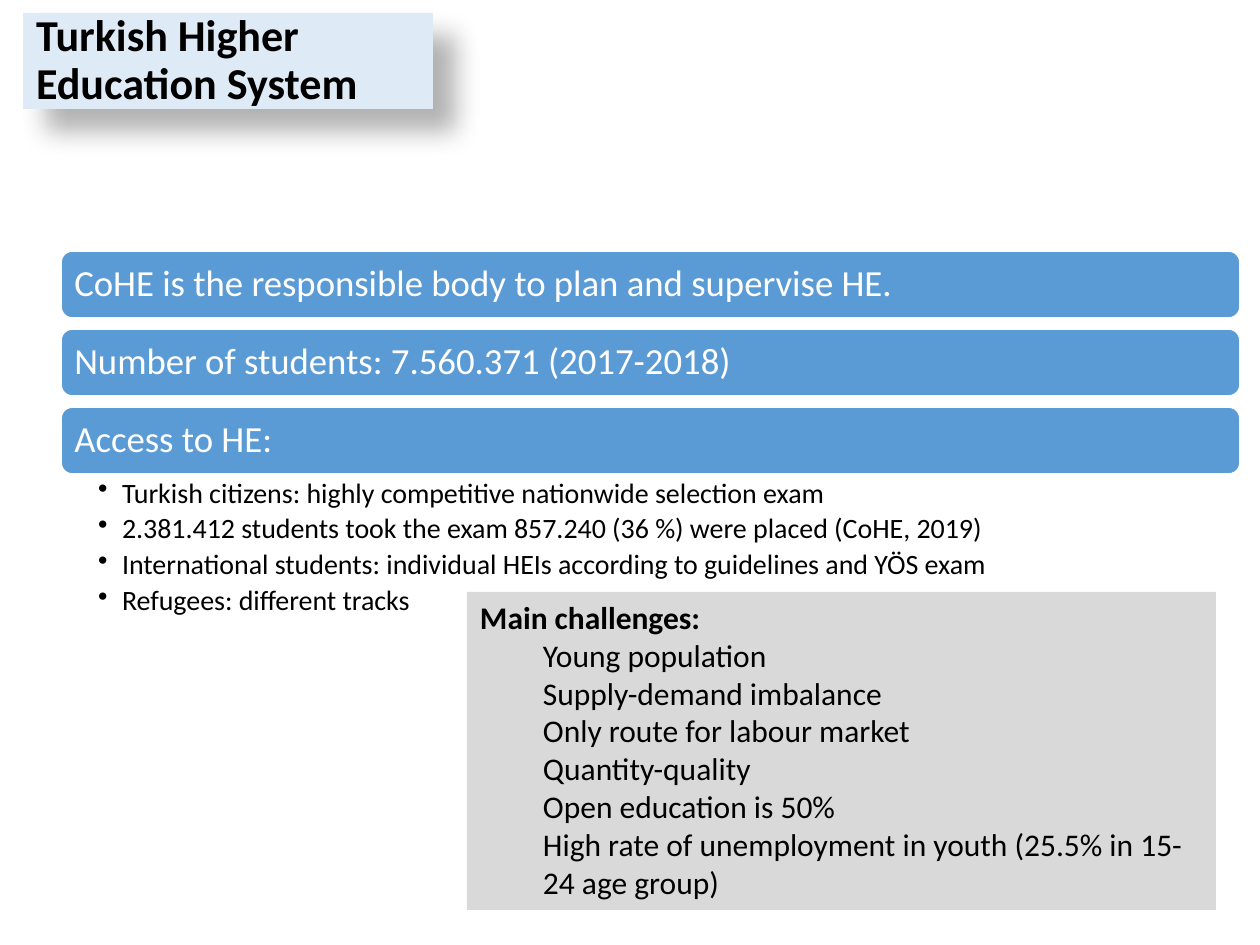
from dataclasses import dataclass

from lxml import etree
from pptx import Presentation
from pptx import util as u
from pptx.dml.color import RGBColor
from pptx.enum import shapes, text
from pptx.oxml import ns

EMU_PER_PX = 914400 / 126


@dataclass(frozen=True)
class Theme:
    font: str = "Calibri"
    ink: str = "000000"
    paper: str = "FFFFFF"
    title_fill: str = "DEEBF7"
    bar_fill: str = "5B9BD5"
    challenge_fill: str = "D9D9D9"
    title_size: float = 25.2
    bar_size: float = 21
    bullet_size: float = 16
    challenge_size: float = 18


@dataclass(frozen=True)
class Box:
    left: int
    top: int
    width: int
    height: int


@dataclass(frozen=True)
class Line:
    words: str
    size: float
    color: str
    bold: bool = False
    level: int = 0
    margin: int = 0
    hanging: int = 0
    bullet: str = ""
    spacing: float = 1.0
    after: float = 0


THEME = Theme()
TITLE_BOX = Box(23, 13, 410, 96)
FIRST_BAR = Box(61, 251, 1179, 67)
BAR_PITCH = 78
BULLET_BOX = Box(61, 475, 1179, 152)
CHALLENGE_BOX = Box(467, 592, 749, 318)

BARS = (
    "CoHE is the responsible body to plan and supervise HE.",
    "Number of students: 7.560.371 (2017-2018)",
    "Access to HE:",
)
ACCESS_ROUTES = (
    "Turkish citizens: highly competitive nationwide selection exam",
    "2.381.412 students took the exam 857.240 (36 %) were placed (CoHE, 2019)",
    "International students: individual HEIs according to guidelines and YÖS exam",
    "Refugees: different tracks",
)
CHALLENGES = (
    "Young population",
    "Supply-demand imbalance",
    "Only route for labour market",
    "Quantity-quality",
    "Open education is 50%",
    "High rate of unemployment in youth (25.5% in 15-24 age group)",
)


def px(length: int) -> int:
    return round(length * EMU_PER_PX)


def place(box: Box) -> tuple[int, ...]:
    return px(box.left), px(box.top), px(box.width), px(box.height)


def set_values(target, values: dict) -> None:
    for name, value in values.items():
        setattr(target, name, value)


def write_lines(shape, lines: list[Line], insets: tuple[int, int, int, int],
                anchor=text.MSO_ANCHOR.MIDDLE) -> None:
    """Fill a shape with paragraphs; insets run left, top, right, bottom."""
    frame = shape.text_frame
    sides = ("margin_left", "margin_top", "margin_right", "margin_bottom")
    set_values(frame, {"word_wrap": True, "vertical_anchor": anchor,
                       **dict(zip(sides, map(px, insets)))})
    for index, line in enumerate(lines):
        paragraph = frame.add_paragraph() if index else frame.paragraphs[0]
        set_values(paragraph, {
            "alignment": text.PP_ALIGN.LEFT, "level": line.level,
            "line_spacing": line.spacing, "space_after": u.Pt(line.after)})
        properties = paragraph._p.get_or_add_pPr()
        properties.set("marL", str(px(line.margin)))
        properties.set("indent", str(-px(line.hanging)))
        if line.bullet:
            etree.SubElement(properties, ns.qn("a:buChar"), char=line.bullet)
        run = paragraph.add_run()
        run.text = line.words
        set_values(run.font, {"name": THEME.font, "size": u.Pt(line.size),
                              "bold": line.bold})
        run.font.color.rgb = RGBColor.from_string(line.color)


def add_panel(slide, box: Box, fill: str, kind=shapes.MSO_SHAPE.RECTANGLE):
    shape = slide.shapes.add_shape(kind, *place(box))
    shape.shadow.inherit = False
    shape.fill.solid()
    shape.fill.fore_color.rgb = RGBColor.from_string(fill)
    shape.line.fill.background()
    return shape


def add_soft_shadow(shape) -> None:
    effects = shape._element.spPr.find(ns.qn("a:effectLst"))
    shadow = etree.SubElement(
        effects, ns.qn("a:outerShdw"), blurRad=str(u.Pt(15)),
        dist=str(u.Pt(18)), dir="2700000", algn="tl", rotWithShape="0")
    color = etree.SubElement(shadow, ns.qn("a:srgbClr"), val=THEME.ink)
    etree.SubElement(color, ns.qn("a:alpha"), val="30000")


def add_title(slide) -> None:
    title = add_panel(slide, TITLE_BOX, THEME.title_fill)
    add_soft_shadow(title)
    write_lines(title, [Line("Turkish Higher Education System", THEME.title_size,
                             THEME.ink, bold=True, spacing=0.9)], (13, 6, 13, 6))


def add_bars(slide) -> None:
    for index, words in enumerate(BARS):
        box = Box(FIRST_BAR.left, FIRST_BAR.top + index * BAR_PITCH,
                  FIRST_BAR.width, FIRST_BAR.height)
        bar = add_panel(slide, box, THEME.bar_fill,
                        shapes.MSO_SHAPE.ROUNDED_RECTANGLE)
        bar.line.color.rgb = RGBColor.from_string(THEME.paper)
        bar.line.width = u.Pt(1)
        write_lines(bar, [Line(words, THEME.bar_size, THEME.paper, spacing=0.9)],
                    (10, 8, 10, 8))


def add_access_routes(slide) -> None:
    lines = [Line(words, THEME.bullet_size, THEME.ink, level=1, margin=24,
                  hanging=24, bullet="•", spacing=0.9, after=3.2)
             for words in ACCESS_ROUTES]
    write_lines(slide.shapes.add_textbox(*place(BULLET_BOX)), lines,
                (37, 4, 20, 4), text.MSO_ANCHOR.TOP)


def add_challenges(slide) -> None:
    heading = Line("Main challenges:", THEME.challenge_size, THEME.ink, bold=True)
    items = [Line(words, THEME.challenge_size, THEME.ink, level=1, margin=63)
             for words in CHALLENGES]
    write_lines(add_panel(slide, CHALLENGE_BOX, THEME.challenge_fill),
                [heading, *items], (13, 6, 13, 6), text.MSO_ANCHOR.TOP)


def main() -> None:
    presentation = Presentation()
    set_values(presentation, {"slide_width": u.Inches(10),
                              "slide_height": u.Inches(7.5)})
    slide = presentation.slides.add_slide(presentation.slide_layouts[6])
    add_title(slide)
    add_bars(slide)
    add_access_routes(slide)
    add_challenges(slide)
    presentation.save("out.pptx")


if __name__ == "__main__":
    main()
